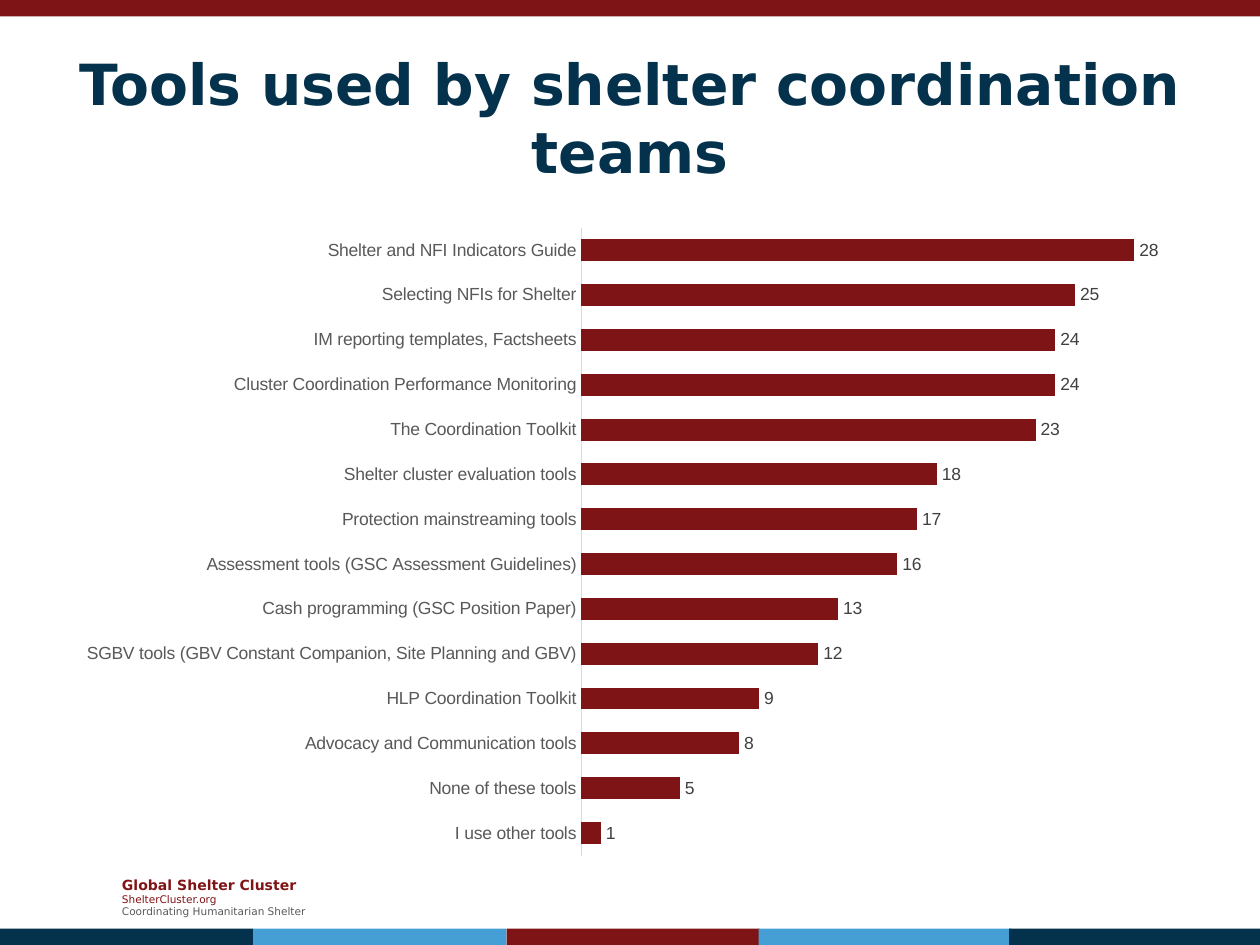
from lxml import etree
from pptx import Presentation
from pptx.chart.data import CategoryChartData
from pptx.dml.color import RGBColor
from pptx.enum import chart as ch, shapes, text
from pptx.oxml import parse_xml
from pptx.oxml.ns import nsdecls
from pptx.util import Inches, Pt

RED, NAVY, BLUE = "7F1416", "04314C", "459FD5"


def rgb(value):
    return RGBColor.from_string(value)


def write(paragraph, words, size, color, bold=False, align=text.PP_ALIGN.LEFT):
    paragraph.alignment = align
    run = paragraph.add_run()
    run.text = words
    run.font.name = "DejaVu Sans"
    run.font.size = Pt(size)
    run.font.bold = bold
    run.font.color.rgb = rgb(color)


prs = Presentation()
prs.slide_width, prs.slide_height = Inches(10), Inches(7.5)
slide = prs.slides.add_slide(prs.slide_layouts[5])

# Top band and the five-part bottom band
bands = [(0, 0, 10, RED)]
bands += [(left, 7.37, 2.01, color) for left, color in
          zip((0, 2.01, 4.02, 6.02, 8.01), (NAVY, BLUE, RED, BLUE, NAVY))]
for left, top, width, color in bands:
    band = slide.shapes.add_shape(shapes.MSO_SHAPE.RECTANGLE, Inches(left),
                                  Inches(top), Inches(width), Inches(0.13))
    band.shadow.inherit = False
    band.fill.solid()
    band.fill.fore_color.rgb = rgb(color)
    band.line.fill.background()

# Title
title = slide.shapes.title
title.left, title.top = Inches(0), Inches(0.3)
title.width, title.height = Inches(10), Inches(1.25)
title.text_frame.word_wrap = True
title.text_frame.auto_size = text.MSO_AUTO_SIZE.NONE
title.text_frame.vertical_anchor = text.MSO_ANCHOR.MIDDLE
write(title.text_frame.paragraphs[0], "Tools used by shelter coordination teams",
      32.4, NAVY, bold=True, align=text.PP_ALIGN.CENTER)

# Organisation footer
footer = slide.shapes.add_textbox(Inches(0.87), Inches(6.9), Inches(1.73),
                                  Inches(0.44)).text_frame
footer.word_wrap = True
footer.vertical_anchor = text.MSO_ANCHOR.MIDDLE
write(footer.paragraphs[0], "Global Shelter Cluster", 8, RED, bold=True)
write(footer.add_paragraph(), "ShelterCluster.org", 6, RED)
write(footer.add_paragraph(), "Coordinating Humanitarian Shelter", 6, "595959")

# Tool usage, listed from the bottom bar up
usage = [
    ("I use other tools", 1),
    ("None of these tools", 5),
    ("Advocacy and Communication tools", 8),
    ("HLP Coordination Toolkit", 9),
    ("SGBV tools (GBV Constant Companion, Site Planning and GBV)", 12),
    ("Cash programming (GSC Position Paper)", 13),
    ("Assessment tools (GSC Assessment Guidelines)", 16),
    ("Protection mainstreaming tools", 17),
    ("Shelter cluster evaluation tools", 18),
    ("The Coordination Toolkit", 23),
    ("Cluster Coordination Performance Monitoring", 24),
    ("IM reporting templates, Factsheets", 24),
    ("Selecting NFIs for Shelter", 25),
    ("Shelter and NFI Indicators Guide", 28),
]
data = CategoryChartData()
data.categories = [tool for tool, count in usage]
data.add_series("Series 1", [count for tool, count in usage])
chart = slide.shapes.add_chart(ch.XL_CHART_TYPE.BAR_CLUSTERED, Inches(0.51),
                               Inches(1.71), Inches(8.98), Inches(5.19), data).chart
chart.has_title = False
chart.has_legend = False

tools = chart.category_axis
tools.major_tick_mark = ch.XL_TICK_MARK.NONE
tools.format.line.color.rgb = rgb("D9D9D9")
tools.format.line.width = Pt(0.75)
counts = chart.value_axis
counts.visible = False
counts.has_major_gridlines = False
counts.minimum_scale, counts.maximum_scale = 0, 30

plot = chart.plots[0]
plot.gap_width = 105
plot.vary_by_categories = False
bars = plot.series[0].format.fill
bars.solid()
bars.fore_color.rgb = rgb(RED)
plot.has_data_labels = True
labels = plot.data_labels
labels.show_value = True
labels.position = ch.XL_LABEL_POSITION.OUTSIDE_END

for font, color in ((chart.font, "000000"), (tools.tick_labels.font, "595959"),
                    (labels.font, "404040")):
    font.name = "Arial"
    font.size = Pt(10)
    font.color.rgb = rgb(color)

# Fix the inner plot area, as fractions of the chart
plot_area = chart.element.find(".//{*}plotArea")
for old in plot_area.findall("{*}layout"):
    plot_area.remove(old)
layout = parse_xml(f"<c:layout {nsdecls('c')}><c:manualLayout/></c:layout>")
for tag, value in (("layoutTarget", "inner"), ("xMode", "edge"), ("yMode", "edge"),
                   ("x", 0.457), ("y", 0.019), ("w", 0.524), ("h", 0.96)):
    etree.SubElement(layout[0], f"{{{layout.nsmap['c']}}}{tag}").set("val", str(value))
plot_area.insert(0, layout)

prs.save("out.pptx")
